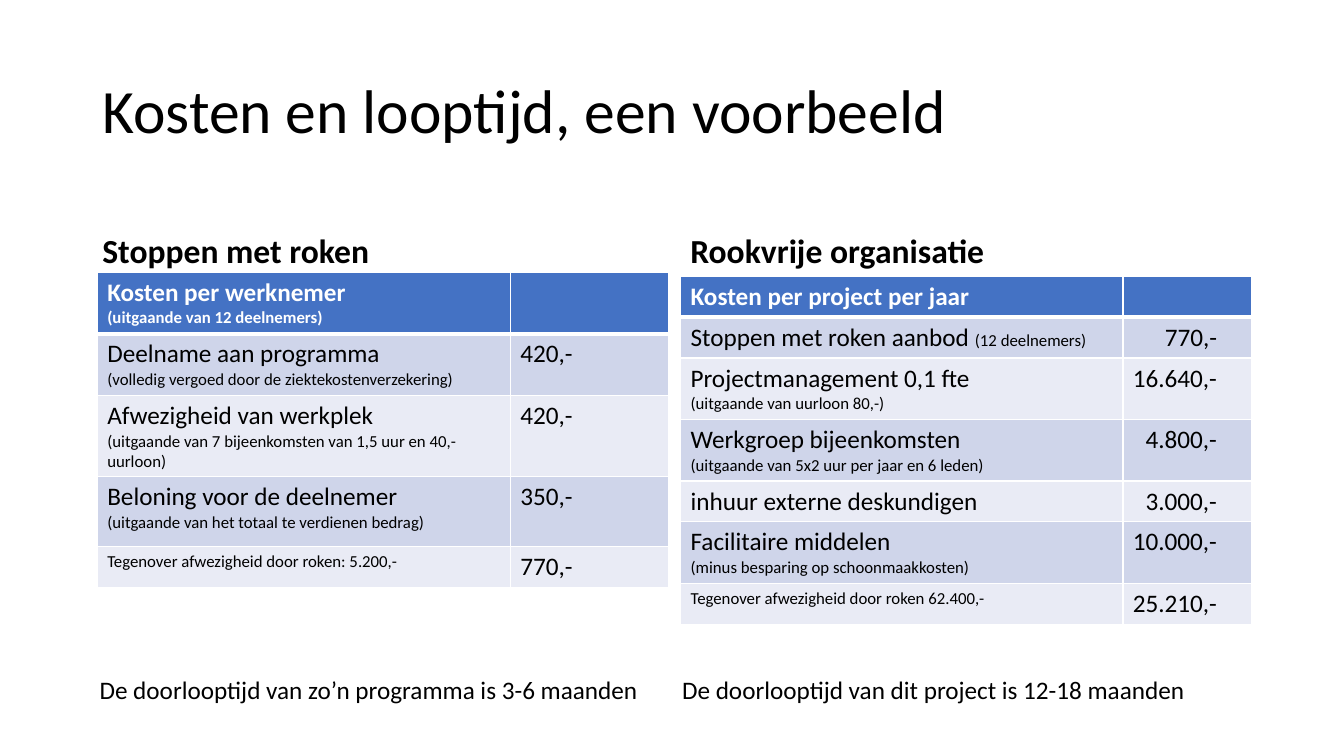
import pptx
import pptx.util
import pptx.dml.color
import pptx.enum.text
from lxml import etree
from pptx.util import Cm

ALIGN = pptx.enum.text.PP_ALIGN
ANCHOR = pptx.enum.text.MSO_ANCHOR
MAIN, NOTE = 18, 12


def color(code):
    return pptx.dml.color.RGBColor.from_string(code)


def write(frame, paragraphs, ink="000000", bold=False, align=ALIGN.LEFT,
          anchor=ANCHOR.TOP, spacing=1.0, before=0):
    """Fill a frame; each paragraph is a list of (text, size) spans."""
    frame.word_wrap = True
    frame.vertical_anchor = anchor
    for index, spans in enumerate(paragraphs):
        para = frame.add_paragraph() if index else frame.paragraphs[0]
        para.alignment = align
        para.line_spacing = spacing
        para.space_before = pptx.util.Pt(before)
        for text, size in spans:
            span = para.add_run()
            span.text = text
            span.font.name = "Calibri"
            span.font.size = pptx.util.Pt(size)
            span.font.bold = bold
            span.font.color.rgb = color(ink)


deck = pptx.Presentation()
deck.slide_width, deck.slide_height = Cm(33.87), Cm(19.05)
page = deck.slides.add_slide(deck.slide_layouts[6])

# Title, column headings and closing lines
heading = dict(bold=True, anchor=ANCHOR.BOTTOM, spacing=0.9, before=10)
texts = [
    ("Kosten en looptijd, een voorbeeld", 44, (2.33, 1.01, 29.21, 3.68),
     dict(anchor=ANCHOR.MIDDLE, spacing=0.9)),
    ("Stoppen met roken", 24, (2.33, 4.67, 14.33, 2.29), heading),
    ("Rookvrije organisatie", 24, (17.15, 4.67, 14.4, 2.29), heading),
    ("De doorlooptijd van zo’n programma is 3-6 maanden", MAIN,
     (2.26, 16.87, 14.3, 1.03), {}),
    ("De doorlooptijd van dit project is 12-18 maanden", MAIN,
     (16.94, 16.87, 14.3, 1.03), {}),
]
for text, size, place, style in texts:
    box = page.shapes.add_textbox(*map(Cm, place))
    write(box.text_frame, [[(text, size)]], **style)

# Cost tables: rows hold label paragraphs, amount and height
employee_rows = [
    ([[("Kosten per werknemer", MAIN)], [("(uitgaande van 12 deelnemers)", NOTE)]], "", 1.55),
    ([[("Deelname aan programma", MAIN)],
      [("(volledig vergoed door de ziektekostenverzekering)", NOTE)]], "420,-", 1.55),
    ([[("Afwezigheid van werkplek", MAIN)],
      [("(uitgaande van 7 bijeenkomsten van 1,5 uur en 40,- uurloon)", NOTE)]], "420,-", 2.05),
    ([[("Beloning voor de deelnemer", MAIN)],
      [("(uitgaande van het totaal te verdienen bedrag)", NOTE)]], "350,-", 1.76),
    ([[("Tegenover afwezigheid door roken: 5.200,-", NOTE)]], "770,-", 1.03),
]
project_rows = [
    ([[("Kosten per project per jaar", MAIN)]], "", 1.03),
    ([[("Stoppen met roken aanbod ", MAIN), ("(12 deelnemers)", NOTE)]], "770,-", 1.03),
    ([[("Projectmanagement 0,1 fte", MAIN)],
      [("(uitgaande van uurloon 80,-)", NOTE)]], "16.640,-", 1.55),
    ([[("Werkgroep bijeenkomsten", MAIN)],
      [("(uitgaande van 5x2 uur per jaar en 6 leden)", NOTE)]], "4.800,-", 1.55),
    ([[("inhuur externe deskundigen", MAIN)]], "3.000,-", 1.03),
    ([[("Facilitaire middelen", MAIN)],
      [("(minus besparing op schoonmaakkosten)", NOTE)]], "10.000,-", 1.55),
    ([[("Tegenover afwezigheid door roken 62.400,-", NOTE)]], "25.210,-", 1.03),
]
tables = [
    (employee_rows, 2.45, 6.86, (10.41, 3.99), ALIGN.LEFT),
    (project_rows, 17.15, 6.96, (11.15, 3.25), ALIGN.RIGHT),
]
NS = "http://schemas.openxmlformats.org/drawingml/2006/main"
for rows, left, top, widths, amount_align in tables:
    height = sum(row[2] for row in rows)
    table = page.shapes.add_table(len(rows), 2, Cm(left), Cm(top),
                                  Cm(sum(widths)), Cm(height)).table
    for column, width in zip(table.columns, widths):
        column.width = Cm(width)
    for r, (label, amount, row_height) in enumerate(rows):
        table.rows[r].height = Cm(row_height)
        header = r == 0
        ink = "FFFFFF" if header else "000000"
        fill = "4472C4" if header else ("E9EBF5", "CFD5EA")[r % 2]
        label_cell, amount_cell = table.cell(r, 0), table.cell(r, 1)
        write(label_cell.text_frame, label, ink=ink, bold=header)
        if amount:
            write(amount_cell.text_frame, [[(amount, MAIN)]], align=amount_align)
        if amount_align == ALIGN.RIGHT:
            amount_cell.margin_left, amount_cell.margin_right = Cm(0), Cm(0.88)
        for cell in (label_cell, amount_cell):
            # White borders, thicker below the header; they precede the fill
            props = cell._tc.get_or_add_tcPr()
            for side in ("lnL", "lnR", "lnT", "lnB"):
                thick = (r, side) in ((0, "lnB"), (1, "lnT"))
                line = etree.SubElement(props, f"{{{NS}}}{side}",
                                        w=str(pptx.util.Pt(3 if thick else 1)))
                solid = etree.SubElement(line, f"{{{NS}}}solidFill")
                etree.SubElement(solid, f"{{{NS}}}srgbClr", val="FFFFFF")
            cell.fill.solid()
            cell.fill.fore_color.rgb = color(fill)

deck.save("out.pptx")
